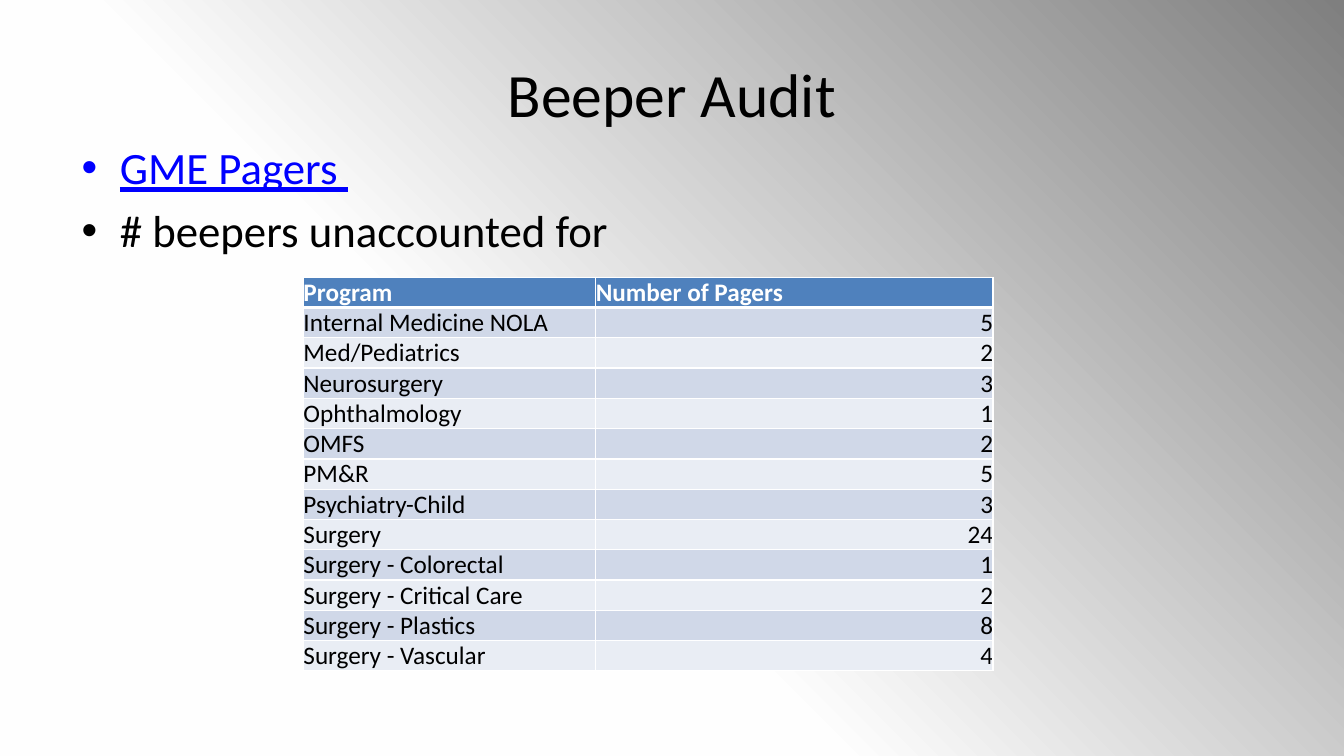
from lxml import etree
from pptx import Presentation
from pptx import util as u
from pptx.dml.color import RGBColor
from pptx.enum import text
from pptx.oxml import parse_xml
from pptx.oxml.ns import qn

NS = 'xmlns:a="http://schemas.openxmlformats.org/drawingml/2006/main"'
FONT = "Calibri"
COLORS = {
    "ink": "000000", "link": "0000FF", "white": "FFFFFF",
    "header": "4F81BD", "odd": "D0D8E8", "even": "E9EDF4",
}
BACKDROP = [(0, "FFFFFF"), (40, "FEFEFE"), (100, "7F7F7F")]
BULLETS = [("GME Pagers ", "link", True), ("# beepers unaccounted for", "ink", False)]
PAGERS = [
    ("Program", "Number of Pagers"),
    ("Internal Medicine NOLA", 5),
    ("Med/Pediatrics", 2),
    ("Neurosurgery", 3),
    ("Ophthalmology", 1),
    ("OMFS", 2),
    ("PM&R", 5),
    ("Psychiatry-Child", 3),
    ("Surgery", 24),
    ("Surgery - Colorectal", 1),
    ("Surgery - Critical Care", 2),
    ("Surgery - Plastics", 8),
    ("Surgery - Vascular", 4),
]
WIDTH, HEIGHT = u.Inches(13.33), u.Inches(7.5)


def share(left, top, width, height):
    """Box from percentages of the slide's width and height."""
    return [int(part * side / 100) for part, side in
            zip((left, top, width, height), (WIDTH, HEIGHT) * 2)]


def write(paragraph, words, size=18, color="ink", bold=False, underline=False,
          align=text.PP_ALIGN.LEFT):
    paragraph.alignment = align
    run = paragraph.add_run()
    run.text = str(words)
    font = run.font
    font.name, font.size, font.bold = FONT, u.Pt(size), bold
    font.underline = underline
    font.color.rgb = RGBColor.from_string(COLORS[color])


def paint_background(slide):
    slide.background.fill.solid()
    properties = slide.element.xpath(".//p:bgPr")[0]
    stops = "".join(f'<a:gs pos="{pos * 1000}"><a:srgbClr val="{color}"/></a:gs>'
                    for pos, color in BACKDROP)
    gradient = parse_xml(
        f'<a:gradFill {NS} rotWithShape="1"><a:gsLst>{stops}</a:gsLst>'
        '<a:path path="circle"><a:fillToRect t="100000" r="100000"/></a:path>'
        '</a:gradFill>')
    properties.replace(properties[0], gradient)


def place_title(slide, box):
    title = slide.shapes.title
    title.left, title.top, title.width, title.height = box
    title.text_frame.vertical_anchor = text.MSO_ANCHOR.MIDDLE
    write(title.text_frame.paragraphs[0], "Beeper Audit", size=44,
          align=text.PP_ALIGN.CENTER)


def place_bullets(slide, box):
    frame = slide.shapes.add_textbox(*box).text_frame
    frame.word_wrap = True
    indent = u.Inches(0.38)
    for index, (words, color, underline) in enumerate(BULLETS):
        line = frame.paragraphs[0] if index == 0 else frame.add_paragraph()
        properties = line._p.get_or_add_pPr()
        properties.set("marL", str(indent))
        properties.set("indent", str(-indent))
        etree.SubElement(properties, qn("a:buFont")).set("typeface", "Arial")
        etree.SubElement(properties, qn("a:buChar")).set("char", "•")
        if index:
            line.space_before = u.Pt(6.4)
        write(line, words, size=32, color=color, underline=underline)


def outline_cell(cell, top, bottom):
    properties = cell._tc.get_or_add_tcPr()
    edges = {"lnL": 1, "lnR": 1, "lnT": top, "lnB": bottom}
    for index, (edge, points) in enumerate(edges.items()):
        properties.insert(index, parse_xml(
            f'<a:{edge} {NS} w="{u.Pt(points)}"><a:solidFill>'
            f'<a:srgbClr val="{COLORS["white"]}"/></a:solidFill></a:{edge}>'))


def place_pager_table(slide, box):
    left, top, width, height = box
    table = slide.shapes.add_table(len(PAGERS), 2, *box).table
    table.columns[0].width = int(width * 0.424)
    table.columns[1].width = width - table.columns[0].width
    for r, entry in enumerate(PAGERS):
        table.rows[r].height = height // len(PAGERS)
        header = r == 0
        fill = "header" if header else "odd" if r % 2 else "even"
        for c, words in enumerate(entry):
            cell = table.cell(r, c)
            cell.margin_left = cell.margin_right = 0
            cell.margin_top = cell.margin_bottom = 0
            cell.vertical_anchor = text.MSO_ANCHOR.MIDDLE
            cell.fill.solid()
            cell.fill.fore_color.rgb = RGBColor.from_string(COLORS[fill])
            outline_cell(cell, top=3 if r == 1 else 1, bottom=3 if header else 1)
            numeric = c == 1 and not header
            write(cell.text_frame.paragraphs[0], words, bold=header,
                  color="white" if header else "ink",
                  align=text.PP_ALIGN.RIGHT if numeric else text.PP_ALIGN.LEFT)


def main():
    deck = Presentation()
    deck.slide_width, deck.slide_height = WIDTH, HEIGHT
    slide = deck.slides.add_slide(deck.slide_layouts[5])  # title only
    paint_background(slide)
    place_title(slide, share(5, 4, 90, 16.67))
    place_bullets(slide, share(5.33, 17.87, 90, 66))
    place_pager_table(slide, share(22.58, 36.67, 51.31, 52))
    deck.save("out.pptx")


if __name__ == "__main__":
    main()
